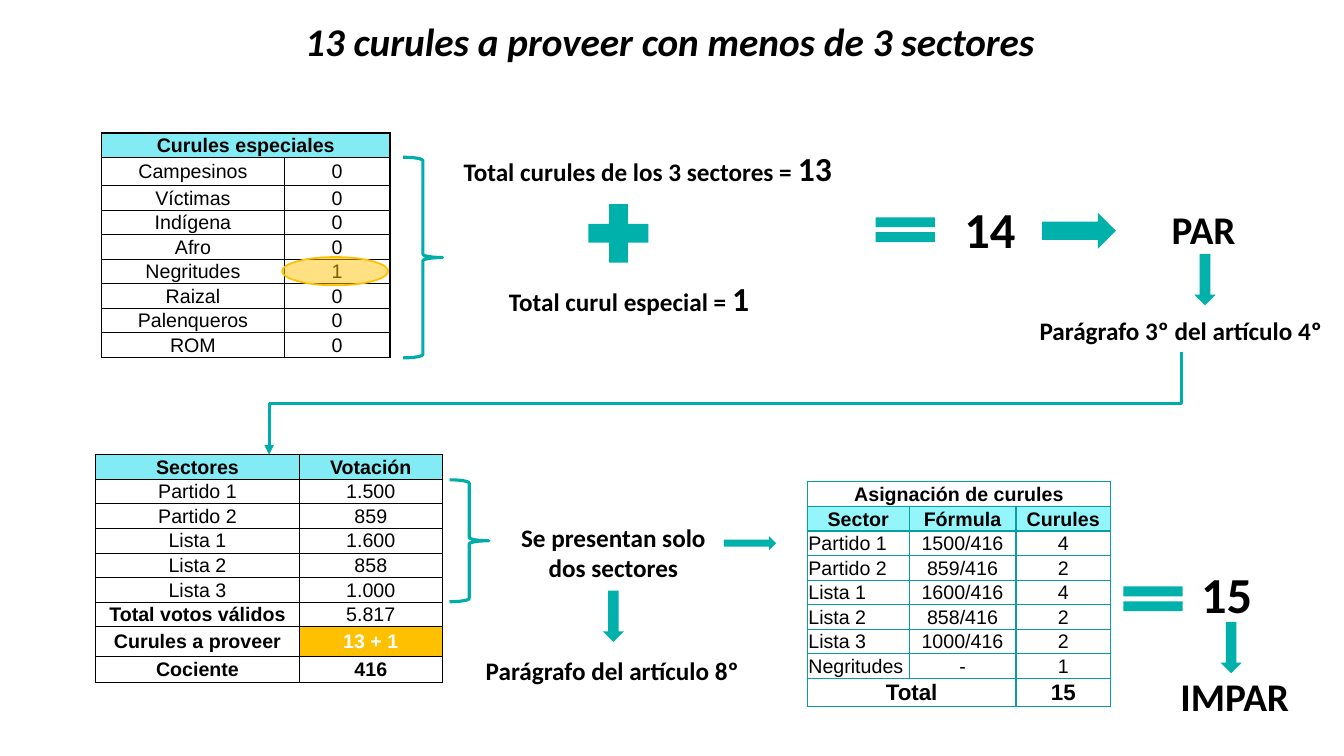
from dataclasses import dataclass
from itertools import product

from lxml.etree import SubElement
from pptx import Presentation
from pptx.dml.color import RGBColor
from pptx.enum.shapes import MSO_CONNECTOR, MSO_SHAPE
from pptx.enum.text import MSO_ANCHOR, MSO_AUTO_SIZE, PP_ALIGN
from pptx.oxml.ns import qn
from pptx.util import Pt


@dataclass(frozen=True)
class Theme:
    ink: str = "000000"
    white: str = "FFFFFF"
    teal: str = "00B1AB"
    line: str = "00ADA9"
    grid: str = "089CA3"
    head: str = "82EBF4"
    pale: str = "94F5FA"
    gold: str = "FFC000"
    sans: str = "Calibri"
    cells: str = "Arial"
    small: int = 14
    sum: int = 16
    body: int = 18
    mid: int = 24
    large: int = 28
    huge: int = 36
    stroke: float = 2.25


def rgb(code):
    return RGBColor.from_string(code)


def points(*sizes):
    return [Pt(size) for size in sizes]


class Board:
    def __init__(self, slide, theme):
        self.slide = slide
        self.theme = theme

    def font(self, run, size, face, bold=True, color=None):
        run.font.name = face
        run.font.size = Pt(size)
        run.font.bold = bold
        run.font.color.rgb = rgb(color or self.theme.ink)

    def title(self, text, at):
        shape = self.slide.shapes.title
        shape.left, shape.top, shape.width, shape.height = points(*at)
        frame = shape.text_frame
        frame.text = text
        frame.word_wrap = True
        frame.vertical_anchor = MSO_ANCHOR.TOP
        frame.paragraphs[0].alignment = PP_ALIGN.CENTER
        run = frame.paragraphs[0].runs[0]
        self.font(run, self.theme.large, self.theme.sans)
        run.font.italic = True

    def text(self, text, at, size=None, total=""):
        """Place a bold label; a total follows it in larger type, left aligned."""
        frame = self.slide.shapes.add_textbox(*points(*at)).text_frame
        frame.text = text
        frame.word_wrap = True
        frame.auto_size = MSO_AUTO_SIZE.SHAPE_TO_FIT_TEXT
        line = frame.paragraphs[0]
        line.alignment = PP_ALIGN.LEFT if total else PP_ALIGN.CENTER
        self.font(line.runs[0], size or self.theme.body, self.theme.sans)
        if total:
            run = line.add_run()
            run.text = total
            self.font(run, self.theme.mid, self.theme.sans)

    def shape(self, kind, at):
        shape = self.slide.shapes.add_shape(kind, *points(*at))
        shape.shadow.inherit = False
        return shape

    def sign(self, kind, at):
        shape = self.shape(kind, at)
        shape.fill.solid()
        shape.fill.fore_color.rgb = rgb(self.theme.teal)
        shape.line.fill.background()

    def drop(self, left, top):
        self.sign(MSO_SHAPE.DOWN_ARROW, (left, top, 15.1, 36.7))

    def brace(self, at):
        shape = self.shape(MSO_SHAPE.RIGHT_BRACE, at)
        shape.fill.background()
        shape.line.color.rgb = rgb(self.theme.line)
        shape.line.width = Pt(self.theme.stroke)

    def ring(self, at):
        shape = self.shape(MSO_SHAPE.OVAL, at)
        shape.fill.solid()
        shape.fill.fore_color.rgb = rgb(self.theme.gold)
        tone = shape.fill._xPr.find(qn("a:solidFill"))[0]
        SubElement(tone, qn("a:alpha"), val="49000")
        shape.line.color.rgb = rgb(self.theme.gold)
        shape.line.width = Pt(1.25)

    def elbow(self, start, end):
        """Run down, across and down: an elbow turned by a quarter."""
        (x1, y1), (x2, y2) = start, end
        midx, midy = (x1 + x2) / 2, (y1 + y2) / 2
        wide, tall = (y2 - y1) / 2, (x1 - x2) / 2
        link = self.slide.shapes.add_connector(
            MSO_CONNECTOR.ELBOW,
            *points(midx - wide, midy - tall, midx + wide, midy + tall))
        link.line.color.rgb = rgb(self.theme.line)
        link.line.width = Pt(self.theme.stroke)
        props = link._element.spPr
        props.find(qn("a:xfrm")).set("rot", "5400000")
        SubElement(props.find(qn("a:ln")), qn("a:tailEnd"), type="triangle")
        SubElement(props, qn("a:effectLst"))

    def edge(self, cell, color, width):
        props = cell._tc.get_or_add_tcPr()
        for side in ("lnL", "lnR", "lnT", "lnB"):
            line = SubElement(props, qn("a:" + side), w=str(Pt(width)))
            fill = SubElement(line, qn("a:solidFill"))
            SubElement(fill, qn("a:srgbClr"), val=color)

    def table(self, spot, cols, rows, data, color, width):
        frame = self.slide.shapes.add_table(
            len(rows), len(cols), *points(*spot, sum(cols), sum(rows)))
        table = frame.table
        table.first_row = table.horz_banding = False
        for col, size in zip(table.columns, cols):
            col.width = Pt(size)
        for row, size in zip(table.rows, rows):
            row.height = Pt(size)
        for r, c in product(range(len(rows)), range(len(cols))):
            cell = table.cell(r, c)
            cell.text = data[r][c]
            cell.vertical_anchor = MSO_ANCHOR.MIDDLE
            cell.margin_left = cell.margin_right = cell.margin_top = Pt(0.72)
            cell.margin_bottom = 0
            self.edge(cell, color, width)
            cell.fill.background()
            line = cell.text_frame.paragraphs[0]
            line.alignment = PP_ALIGN.CENTER
            for run in line.runs:
                self.font(run, self.theme.small, self.theme.cells, False)
        return table

    def mark(self, table, spots, fill=None, size=None, color=None):
        """Set the cells at the given spots in bold, on a fill if one is named."""
        for spot in spots:
            cell = table.cell(*spot)
            if fill:
                cell.fill.solid()
                cell.fill.fore_color.rgb = rgb(fill)
            for run in cell.text_frame.paragraphs[0].runs:
                self.font(run, size or self.theme.small, self.theme.cells, True, color)


def main():
    deck = Presentation()
    deck.slide_width, deck.slide_height = points(960, 540)
    theme = Theme()
    board = Board(deck.slides.add_slide(deck.slide_layouts[5]), theme)
    row = 17.5

    board.title("13 curules a proveer con menos de 3 sectores", (108.7, 8.6, 739.4, 41))

    groups = ("Campesinos", "Víctimas", "Indígena", "Afro", "Negritudes",
              "Raizal", "Palenqueros", "ROM")
    seats = board.table(
        (72.7, 95), (130.3, 75.6), [row, 20.2] + [row] * 7,
        [("Curules especiales", "")]
        + [(name, "1" if name == "Negritudes" else "0") for name in groups],
        theme.ink, 1)
    seats.cell(0, 0).merge(seats.cell(0, 1))
    board.mark(seats, [(0, 0)], theme.head)
    board.ring((201.6, 183.6, 75.6, 20.2))
    board.brace((288, 112.3, 28.1, 143.3))

    board.text("Total curules de los 3 sectores = ", (324, 102.2, 288.7, 36), total="13")
    board.sign(MSO_SHAPE.MATH_PLUS, (412.6, 138.2, 58.3, 56.9))
    board.text("Total curul especial = ", (356.4, 195.1, 288.7, 36), total="1")
    board.sign(MSO_SHAPE.MATH_EQUAL, (617.8, 149, 57.6, 30.2))
    board.text("14", (669.6, 138.2, 74.9, 51.1), theme.huge)
    board.sign(MSO_SHAPE.RIGHT_ARROW, (744.5, 151.9, 52.6, 25.9))
    board.text("PAR", (812.9, 143.3, 93.6, 41), theme.large)
    board.drop(853.2, 181.4)
    board.text("Parágrafo 3º del artículo 4º", (732, 221.8, 223, 28.8))
    board.elbow((843.84, 251.28), (192.24, 324.72))

    votes = board.table(
        (68.4, 324.7), (145.4, 102.2), [row] * 7 + [21.6, 18],
        [("Sectores", "Votación"), ("Partido 1", "1.500"), ("Partido 2", "859"),
         ("Lista 1", "1.600"), ("Lista 2", "858"), ("Lista 3", "1.000"),
         ("Total votos válidos", "5.817"), ("Curules a proveer", "13 + 1"),
         ("Cociente", "416")],
        theme.ink, 0.5)
    board.mark(votes, [(0, 0), (0, 1)], theme.head)
    board.mark(votes, [(6, 0), (7, 0), (8, 0), (8, 1)])
    board.mark(votes, [(7, 1)], theme.gold, color=theme.white)
    board.brace((321.1, 342.7, 28.1, 87.1))

    board.text("Se presentan solo dos sectores", (355.7, 369.4, 164.9, 51.1))
    board.sign(MSO_SHAPE.RIGHT_ARROW, (517, 383, 37.4, 10.1))
    board.drop(430.6, 421.9)
    board.text("Parágrafo del artículo 8º", (293, 464.4, 288.7, 28.8))

    split = board.table(
        (576.7, 344.2), (72.7, 76.3, 67.7), [row] * 8 + [20],
        [("Asignación de curules", "", ""), ("Sector", "Fórmula", "Curules"),
         ("Partido 1", "1500/416", "4"), ("Partido 2", "859/416", "2"),
         ("Lista 1", "1600/416", "4"), ("Lista 2", "858/416", "2"),
         ("Lista 3", "1000/416", "2"), ("Negritudes", "-", "1"),
         ("Total", "", "15")],
        theme.grid, 1)
    split.cell(0, 0).merge(split.cell(0, 2))
    split.cell(8, 0).merge(split.cell(8, 1))
    board.mark(split, [(0, 0)])
    board.mark(split, [(1, c) for c in range(3)], theme.pale)
    board.mark(split, [(8, 0), (8, 2)], size=theme.sum)
    for r in range(2, 8):
        split.cell(r, 0).text_frame.paragraphs[0].alignment = PP_ALIGN.LEFT

    board.sign(MSO_SHAPE.MATH_EQUAL, (794.9, 412.6, 57.6, 30.2))
    board.text("15", (838.8, 398.9, 74.9, 51.1), theme.huge)
    board.drop(871.9, 444.2)
    board.text("IMPAR", (835.2, 476.6, 93.6, 41), theme.large)

    deck.save("out.pptx")


if __name__ == "__main__":
    main()
